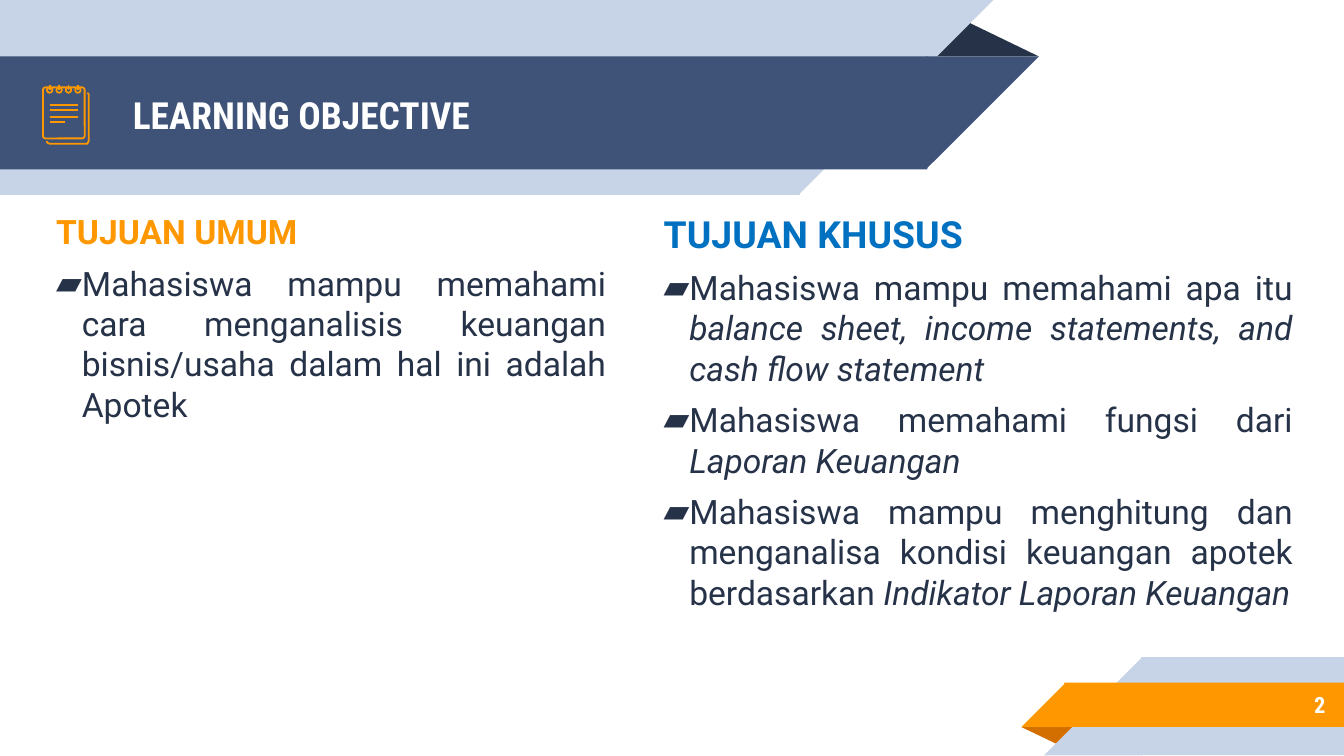
from lxml.etree import SubElement
from pptx import Presentation
from pptx.dml.color import RGBColor
from pptx.enum.shapes import MSO_CONNECTOR, MSO_SHAPE
from pptx.enum.text import MSO_ANCHOR, PP_ALIGN
from pptx.oxml.ns import qn
from pptx.util import Inches, Pt

NAVY = RGBColor(0x26, 0x32, 0x48)
INDIGO = RGBColor(0x3F, 0x53, 0x78)
PALE_BLUE = RGBColor(0xC7, 0xD3, 0xE6)
ORANGE = RGBColor(0xFF, 0x98, 0x00)
DARK_ORANGE = RGBColor(0xD2, 0x6F, 0x00)
BLUE = RGBColor(0x00, 0x70, 0xC0)
WHITE = RGBColor(0xFF, 0xFF, 0xFF)
BODY_FONT = "Roboto"
HEADING_FONT = "Roboto Condensed"
ICON_LINE = Pt(0.96)
SEAM = 0.01  # overlap that hides the joint between two parts of a band


def add_block(slide, preset, left, top, width, height, color, rotation=0, flip=False):
    shape = slide.shapes.add_shape(
        preset, Inches(left), Inches(top), Inches(width), Inches(height))
    shape.shadow.inherit = False
    shape.fill.solid()
    shape.fill.fore_color.rgb = color
    shape.line.fill.background()
    shape.rotation = rotation
    if flip:
        shape._element.spPr.find(qn("a:xfrm")).set("flipH", "1")
    return shape


def add_fold(slide, left, top, width, height, color, rotation=0):
    fold = add_block(slide, MSO_SHAPE.ISOSCELES_TRIANGLE,
                     left, top, width, height, color, rotation)
    fold.adjustments[0] = 0.32


def add_top_band(slide, top, width, height, color):
    """Band from the left edge whose right end is cut at 45 degrees."""
    add_block(slide, MSO_SHAPE.RECTANGLE, 0, top, width + SEAM, height, color)
    add_block(slide, MSO_SHAPE.RIGHT_TRIANGLE, width, top, height, height, color,
              rotation=180, flip=True)


def add_bottom_band(slide, left, top, height, color):
    """Band to the right edge whose left end is cut at 45 degrees."""
    add_block(slide, MSO_SHAPE.RECTANGLE, left - SEAM, top, 10 - left + SEAM, height,
              color)
    add_block(slide, MSO_SHAPE.RIGHT_TRIANGLE, left - height, top, height, height,
              color, flip=True)


def add_text_box(slide, left, top, width, height, anchor=MSO_ANCHOR.TOP):
    box = slide.shapes.add_textbox(
        Inches(left), Inches(top), Inches(width), Inches(height))
    frame = box.text_frame
    frame.word_wrap = True
    frame.vertical_anchor = anchor
    frame.margin_left = frame.margin_right = Inches(0.1)
    frame.margin_top = frame.margin_bottom = Inches(0.1)
    return frame


def add_run(paragraph, text, *, size=18, font=BODY_FONT, color=NAVY,
            bold=False, italic=False):
    run = paragraph.add_run()
    run.text = text
    run.font.size = Pt(size)
    run.font.name = font
    run.font.color.rgb = color
    run.font.bold = bold
    run.font.italic = italic


def add_bullet(frame, plain, emphasis=""):
    paragraph = frame.add_paragraph()
    paragraph.alignment = PP_ALIGN.JUSTIFY
    paragraph.space_before = Pt(6)
    properties = paragraph._p.get_or_add_pPr()
    properties.set("marL", str(Inches(0.19)))
    properties.set("indent", str(-Inches(0.19)))
    bullet_color = SubElement(properties, qn("a:buClr"))
    SubElement(bullet_color, qn("a:srgbClr")).set("val", str(NAVY))
    SubElement(properties, qn("a:buFont")).set("typeface", BODY_FONT)
    SubElement(properties, qn("a:buChar")).set("char", "▰")
    add_run(paragraph, plain)
    if emphasis:
        add_run(paragraph, emphasis, italic=True)


def add_objectives(slide, left, width, height, heading, size, color, bullets):
    frame = add_text_box(slide, left, 1.47, width, height)
    paragraph = frame.paragraphs[0]
    paragraph.space_before = Pt(6)
    add_run(paragraph, heading, size=size, color=color, bold=True)
    for bullet in bullets:
        add_bullet(frame, *bullet)


def style_outline(shape):
    shape.shadow.inherit = False
    shape.fill.background()
    shape.line.color.rgb = ORANGE
    shape.line.width = ICON_LINE


def add_outline(slide, preset, left, top, width, height):
    shape = slide.shapes.add_shape(
        preset, Inches(left), Inches(top), Inches(width), Inches(height))
    style_outline(shape)
    return shape


def add_stroke(slide, x1, y1, x2, y2):
    stroke = slide.shapes.add_connector(
        MSO_CONNECTOR.STRAIGHT, Inches(x1), Inches(y1), Inches(x2), Inches(y2))
    stroke.line.color.rgb = ORANGE
    stroke.line.width = ICON_LINE
    SubElement(stroke._element.spPr, qn("a:effectLst"))


def add_notepad_icon(slide):
    # Freeform points are whole numbers, so they are in hundredths of an inch.
    builder = slide.shapes.build_freeform(35, 105, scale=Inches(0.01))
    builder.add_line_segments(
        [(35, 106), (37, 107), (65, 107), (66, 105), (66, 70), (65, 69)], close=False)
    style_outline(builder.convert_to_shape())

    page = add_outline(slide, MSO_SHAPE.ROUNDED_RECTANGLE, 0.32, 0.65, 0.31, 0.38)
    page.adjustments[0] = 0.06
    for y, right in ((0.78, 0.58), (0.82, 0.58), (0.87, 0.58), (0.91, 0.48)):
        add_stroke(slide, 0.37, y, right, y)
    for ring in range(4):
        x = 0.37 + 0.07 * ring
        add_outline(slide, MSO_SHAPE.OVAL, x - 0.02, 0.65, 0.04, 0.04)
        add_stroke(slide, x, 0.63, x, 0.67)


def main():
    presentation = Presentation()
    presentation.slide_width = Inches(10)
    presentation.slide_height = Inches(10 * 9 / 16)
    slide = presentation.slides.add_slide(presentation.slide_layouts[6])

    add_fold(slide, 6.88, 0.14, 0.85, 0.28, NAVY)
    add_top_band(slide, 0, 5.94, 1.45, PALE_BLUE)
    add_top_band(slide, 0.42, 6.89, 0.84, INDIGO)
    add_fold(slide, 7.6, 5.41, 0.43, 0.14, DARK_ORANGE, rotation=180)
    add_bottom_band(slide, 8.5, 4.89, 0.73, PALE_BLUE)
    add_bottom_band(slide, 7.93, 5.08, 0.33, ORANGE)

    title = add_text_box(slide, 0.89, 0.43, 5.75, 0.84, MSO_ANCHOR.MIDDLE)
    add_run(title.paragraphs[0], "LEARNING OBJECTIVE", size=20,
            font=HEADING_FONT, color=WHITE, bold=True)

    add_objectives(slide, 4.84, 4.88, 3.46, "TUJUAN KHUSUS", 20, BLUE, [
        ("Mahasiswa mampu memahami apa itu ",
         "balance sheet, income statements, and cash flow statement"),
        ("Mahasiswa memahami fungsi dari ", "Laporan Keuangan"),
        ("Mahasiswa mampu menghitung dan menganalisa kondisi keuangan apotek "
         "berdasarkan ", "Indikator Laporan Keuangan"),
    ])

    number = add_text_box(slide, 8.33, 5.07, 1.63, 0.35, MSO_ANCHOR.MIDDLE)
    number.paragraphs[0].alignment = PP_ALIGN.RIGHT
    add_run(number.paragraphs[0], "2", size=12, font=HEADING_FONT,
            color=WHITE, bold=True)

    add_objectives(slide, 0.32, 4.29, 2.4, "TUJUAN UMUM", 18, ORANGE, [
        ("Mahasiswa mampu memahami cara menganalisis keuangan bisnis/usaha "
         "dalam hal ini adalah Apotek",),
    ])
    add_notepad_icon(slide)

    presentation.save("out.pptx")


if __name__ == "__main__":
    main()
